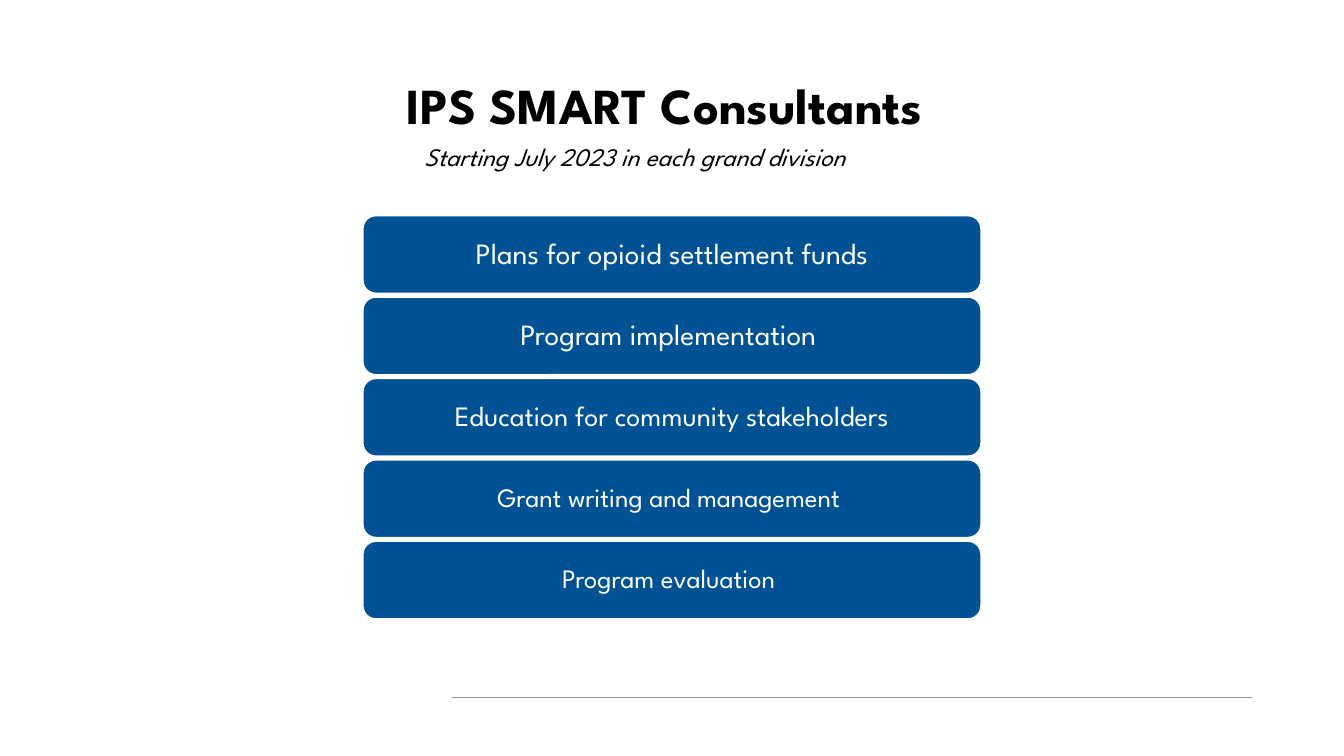
from dataclasses import dataclass

from lxml.etree import SubElement
from pptx import Presentation
from pptx.dml.color import RGBColor
from pptx.enum.shapes import MSO_CONNECTOR, MSO_SHAPE
from pptx.enum.text import MSO_ANCHOR, PP_ALIGN
from pptx.oxml.ns import qn
from pptx.util import Inches, Pt


@dataclass(frozen=True)
class Theme:
    """Colours, font and type sizes of the slide."""
    font: str = "League Spartan"
    black: str = "000000"
    white: str = "FFFFFF"
    blue: str = "005295"
    grey: str = "929897"
    title_size: int = 36
    subtitle_size: int = 18
    large_size: int = 21
    medium_size: int = 20
    small_size: int = 19


def write_text(shape, text, *, font, size, color, bold=False, italic=False,
               align=PP_ALIGN.LEFT, anchor=MSO_ANCHOR.TOP, spacing=1.0, wrap=True):
    """Write one formatted paragraph into a shape."""
    frame = shape.text_frame
    frame.word_wrap = wrap
    frame.vertical_anchor = anchor
    paragraph = frame.paragraphs[0]
    paragraph.alignment = align
    paragraph.line_spacing = spacing
    run = paragraph.add_run()
    run.text = text
    run.font.name = font
    run.font.size = Pt(size)
    run.font.bold = bold
    run.font.italic = italic
    run.font.color.rgb = RGBColor.from_string(color)


class SlideBuilder:
    """Hold the theme and the current slide and add elements to it."""

    def __init__(self, slide, theme):
        """Keep the slide and its theme."""
        self.slide = slide
        self.theme = theme

    def rule(self, left, right, top):
        """Add a thin horizontal line."""
        line = self.slide.shapes.add_connector(
            MSO_CONNECTOR.STRAIGHT, Inches(left), Inches(top), Inches(right), Inches(top))
        line.line.color.rgb = RGBColor.from_string(self.theme.grey)
        line.line.width = Pt(0.75)
        SubElement(line._element.spPr, qn("a:effectLst"))

    def text(self, text, left, top, width, height, **style):
        """Add a text box."""
        box = self.slide.shapes.add_textbox(
            Inches(left), Inches(top), Inches(width), Inches(height))
        write_text(box, text, font=self.theme.font, color=self.theme.black, **style)

    def bar(self, text, left, top, width, height, size):
        """Add a rounded blue bar with centred text."""
        bar = self.slide.shapes.add_shape(
            MSO_SHAPE.ROUNDED_RECTANGLE,
            Inches(left), Inches(top), Inches(width), Inches(height))
        bar.shadow.inherit = False
        bar.fill.solid()
        bar.fill.fore_color.rgb = RGBColor.from_string(self.theme.blue)
        bar.line.color.rgb = RGBColor.from_string(self.theme.white)
        bar.line.width = Pt(1)
        write_text(bar, text, font=self.theme.font, size=size, color=self.theme.white,
                   align=PP_ALIGN.CENTER, anchor=MSO_ANCHOR.MIDDLE, spacing=0.9)


def main():
    """Build and save the consultants slide."""
    theme = Theme()
    presentation = Presentation()
    presentation.slide_width = Inches(13.33)
    presentation.slide_height = Inches(7.5)
    slide = presentation.slides.add_slide(presentation.slide_layouts[6])
    builder = SlideBuilder(slide, theme)

    builder.rule(4.48, 12.42, 6.92)
    builder.text("IPS SMART Consultants ", 1.84, 0.75, 9.64, 1, size=theme.title_size,
                 bold=True, align=PP_ALIGN.CENTER, spacing=0.9)

    services = [
        ("Plans for opioid settlement funds", theme.large_size),
        ("Program implementation ", theme.large_size),
        ("Education for community stakeholders", theme.medium_size),
        ("Grant writing and management ", theme.small_size),
        ("Program evaluation ", theme.small_size),
    ]
    first_top, last_top = 2.14, 5.37
    pitch = (last_top - first_top) / (len(services) - 1)
    for index, (service, size) in enumerate(services):
        builder.bar(service, 3.6, first_top + index * pitch, 6.13, 0.77, size)

    builder.text("Starting July 2023 in each grand division", 4.11, 1.35, 5.12, 0.4,
                 size=theme.subtitle_size, italic=True, wrap=False)
    presentation.save("out.pptx")


if __name__ == "__main__":
    main()
